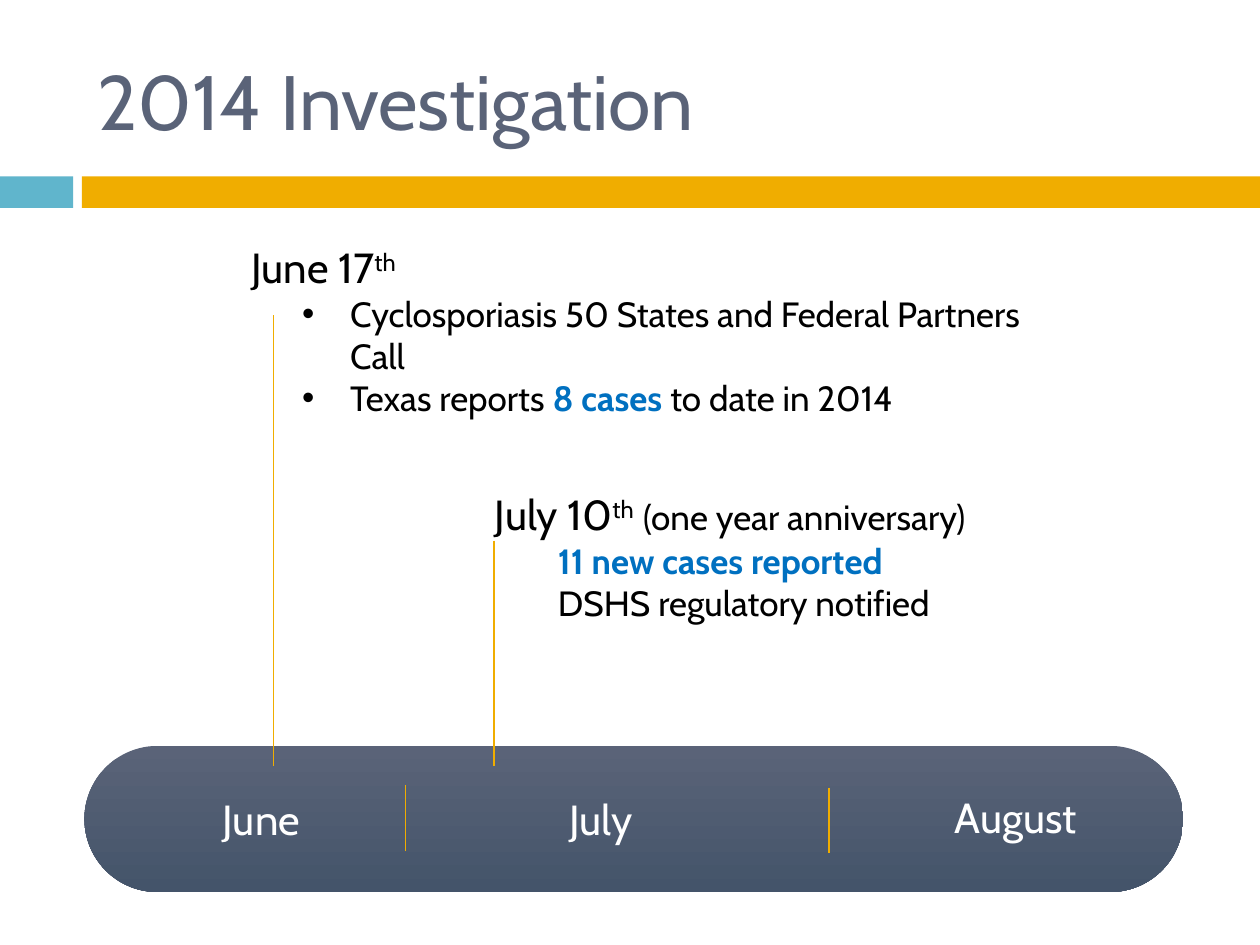
import pptx
import pptx.util
import pptx.dml.color
import pptx.enum.shapes
import pptx.enum.text
import pptx.oxml
import pptx.oxml.ns
import lxml.etree

Inches, Pt = pptx.util.Inches, pptx.util.Pt
SHAPES = pptx.enum.shapes.MSO_SHAPE
ANCHOR = pptx.enum.text.MSO_ANCHOR
AMBER, SLATE, BLUE, BLACK, WHITE = "F0AD00", "5A6378", "0070C0", "000000", "FFFFFF"


def rgb(color):
    return pptx.dml.color.RGBColor.from_string(color)


def add_run(p, text, size, color=BLACK, bold=False, raised=False):
    r = p.add_run()
    r.text = text
    r.font.name, r.font.size, r.font.bold = "Cabin", Pt(size), bold
    r.font.color.rgb = rgb(color)
    if raised:
        r._r.get_or_add_rPr().set("baseline", "30000")


prs = pptx.Presentation()
prs.slide_width, prs.slide_height = Inches(10), Inches(7.5)
s = prs.slides.add_slide(prs.slide_layouts[5])

# Header band
for x, w, color in [(0, 0.58, "60B5CC"), (0.65, 9.35, AMBER)]:
    sp = s.shapes.add_shape(SHAPES.RECTANGLE, Inches(x), Inches(1.4), Inches(w), Inches(0.25))
    sp.shadow.inherit = False
    sp.fill.solid()
    sp.fill.fore_color.rgb = rgb(color)
    sp.line.fill.background()

# Title
sp = s.shapes.title
sp.left, sp.top, sp.width, sp.height = Inches(0.67), Inches(0.25), Inches(8.92), Inches(1.08)
tf = sp.text_frame
tf.vertical_anchor = ANCHOR.MIDDLE
p = tf.paragraphs[0]
p.alignment = pptx.enum.text.PP_ALIGN.LEFT
add_run(p, "2014 Investigation", 44, SLATE)

# Timeline bar
sp = s.shapes.add_shape(SHAPES.ROUNDED_RECTANGLE, Inches(0.67), Inches(5.92), Inches(8.72), Inches(1.16))
sp.adjustments[0] = 0.5
sp.shadow.inherit = False
sp.line.fill.background()
sp.fill.gradient()
sp.fill.gradient_angle = 270
for stop, position, color in zip(sp.fill.gradient_stops, (0, 1), (SLATE, "44546A")):
    stop.position = position
    stop.color.rgb = rgb(color)

# Month separators and event markers
for x, top, bottom, width in [
    (3.22, 6.23, 6.75, 0.79),
    (6.58, 6.25, 6.77, 0.79),
    (3.92, 4.29, 6.08, 0.79),
    (2.17, 2.5, 6.08, 1),
]:
    line = s.shapes.add_connector(
        pptx.enum.shapes.MSO_CONNECTOR.STRAIGHT, Inches(x), Inches(top), Inches(x), Inches(bottom))
    line.line.color.rgb = rgb(AMBER)
    line.line.width = Pt(width)
    lxml.etree.SubElement(line._element.spPr, pptx.oxml.ns.qn("a:effectLst"))

# Month names and event notes: box, then paragraphs as (level, bullet, indents, runs)
plain, bulleted = (1, False, 0.5, 0), (1, True, 0.78, -0.38)
head = (0, False, 0, 0)
texts = [
    (1.67, 6.25, 1.33, 0.5, [(head, [("June", 24, WHITE)])]),
    (4.42, 6.25, 2, 0.5, [(head, [("July", 24, WHITE)])]),
    (7.48, 6.23, 2.08, 0.5, [(head, [("August", 24, WHITE)])]),
    (3.83, 3.83, 4.04, 1.18, [
        (head, [("July 10", 24), ("th", 24, BLACK, False, True), (" ", 24), ("(one year anniversary)", 20)]),
        (plain, [("11 new cases reported", 20, BLUE, True)]),
        (plain, [("DSHS regulatory notified", 20)]),
    ]),
    (1.9, 1.87, 6.67, 1.18, [
        (head, [("June 17", 24), ("th", 24, BLACK, False, True)]),
        (bulleted, [("Cyclosporiasis 50 States and Federal Partners Call", 20)]),
        (bulleted, [("Texas reports ", 20), ("8 cases ", 20, BLUE, True), ("to date in 2014", 20)]),
    ]),
]
for x, y, w, h, paragraphs in texts:
    tf = s.shapes.add_textbox(Inches(x), Inches(y), Inches(w), Inches(h)).text_frame
    tf.word_wrap = True
    for i, ((level, bullet, margin, indent), runs) in enumerate(paragraphs):
        p = tf.add_paragraph() if i else tf.paragraphs[0]
        p.level = level
        pPr = p._p.get_or_add_pPr()
        pPr.set("marL", str(Inches(margin)))
        pPr.set("indent", str(Inches(indent)))
        if bullet:
            font = lxml.etree.SubElement(pPr, pptx.oxml.ns.qn("a:buFont"))
            font.set("typeface", "Arial")
            lxml.etree.SubElement(pPr, pptx.oxml.ns.qn("a:buChar")).set("char", "•")
        for run in runs:
            add_run(p, *run)

prs.save("out.pptx")
